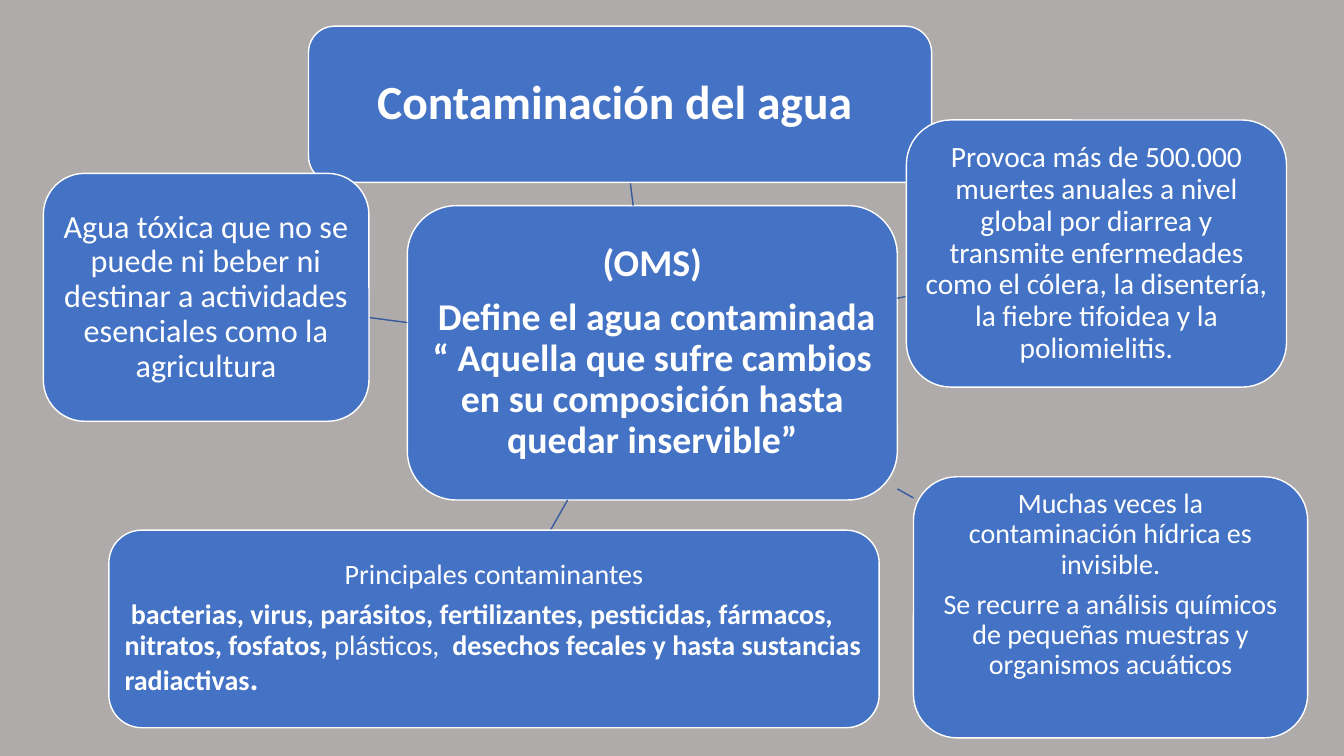
from pptx import Presentation
from pptx.dml.color import RGBColor
from pptx.enum.shapes import MSO_CONNECTOR as Connector, MSO_SHAPE as Shape
from pptx.enum.text import MSO_ANCHOR as Anchor, PP_ALIGN as Align
from pptx.oxml.ns import qn
from pptx.util import Inches, Pt
from lxml import etree

GRAY = RGBColor(0xAF, 0xAB, 0xAB)
BLUE = RGBColor(0x44, 0x72, 0xC4)
DARK_BLUE = RGBColor(0x36, 0x5B, 0x9D)
WHITE = RGBColor(0xFF, 0xFF, 0xFF)


class WaterMap:
    """Style and slide of the concept map."""
    font = "Calibri"
    line_spacing = 0.9
    space_after = 0.35  # share of the text size

    def __init__(self, slide):
        self.slide = slide
        fill = slide.background.fill
        fill.solid()
        fill.fore_color.rgb = GRAY

    def link(self, x1, y1, x2, y2):
        line = self.slide.shapes.add_connector(
            Connector.STRAIGHT, Inches(x1), Inches(y1), Inches(x2), Inches(y2))
        line.line.color.rgb = DARK_BLUE
        line.line.width = Pt(1)
        etree.SubElement(line._element.spPr, qn("a:effectLst"))

    def box(self, left, top, width, height, paragraphs, size, bold=False, inset=0.06):
        bubble = self.slide.shapes.add_shape(
            Shape.ROUNDED_RECTANGLE, Inches(left), Inches(top), Inches(width), Inches(height))
        bubble.shadow.inherit = False
        bubble.fill.solid()
        bubble.fill.fore_color.rgb = BLUE
        bubble.line.color.rgb = WHITE
        bubble.line.width = Pt(1)
        frame = bubble.text_frame
        frame.word_wrap = True
        frame.vertical_anchor = Anchor.MIDDLE
        frame.margin_left = frame.margin_right = Inches(inset)
        frame.margin_top = frame.margin_bottom = Inches(inset)
        frame.text = "\n".join(paragraphs)
        for paragraph in frame.paragraphs:
            paragraph.alignment = Align.CENTER
            paragraph.line_spacing = self.line_spacing
            paragraph.space_after = Pt(self.space_after * size)
            for run in paragraph.runs:
                self.style(run, size, bold)
        return frame

    def style(self, run, size, bold):
        run.font.name = self.font
        run.font.size = Pt(size)
        run.font.bold = bold
        run.font.color.rgb = WHITE

    def mixed_runs(self, paragraph, pieces):
        for text, size, bold in pieces:
            run = paragraph.add_run()
            run.text = text
            self.style(run, size, bold)


def main():
    prs = Presentation()
    prs.slide_width, prs.slide_height = Inches(13.33), Inches(7.5)
    water = WaterMap(prs.slides.add_slide(prs.slide_layouts[6]))

    # Central definition
    water.box(4.04, 2.04, 4.86, 2.92, [
        "(OMS)",
        " Define el agua contaminada “ Aquella que sufre cambios en su composición "
        "hasta quedar inservible”"], 27, bold=True, inset=0.07)

    # Title
    water.link(6.28, 2.04, 6.25, 1.8)
    water.box(3.06, 0.26, 6.18, 1.55, ["Contaminación del agua "], 34, bold=True, inset=0.09)

    # Deaths and diseases
    water.link(8.9, 2.96, 8.99, 2.94)
    water.box(8.99, 1.19, 3.77, 2.65, [
        "Provoca más de 500.000 muertes anuales a nivel global por diarrea y transmite "
        "enfermedades como el cólera, la disentería, la fiebre tifoidea y la poliomielitis."], 21)

    # Main pollutants
    water.link(5.63, 4.96, 5.46, 5.26)
    pollutants = water.box(1.08, 5.26, 7.64, 1.96, ["Principales contaminantes", ""], 20)
    pollutant_list = pollutants.paragraphs[1]
    pollutant_list.alignment = Align.LEFT
    water.mixed_runs(pollutant_list, [
        (" bacterias, virus, parásitos, fertilizantes, pesticidas, fármacos, nitratos, fosfatos,",
         20, True),
        (" plásticos, ", 20, False),
        (" desechos fecales y hasta sustancias radiactivas", 20, True),
        (".", 24, True)])

    # Toxic water
    water.link(4.04, 3.2, 3.66, 3.15)
    water.box(0.43, 1.72, 3.23, 2.46, [
        "Agua tóxica que no se puede ni beber ni destinar a actividades esenciales "
        "como la agricultura"], 23)

    # Invisible pollution, set from the top of its box
    water.link(8.9, 4.85, 9.06, 4.94)
    invisible = water.box(9.06, 4.73, 3.91, 2.59, [
        "Muchas veces la contaminación hídrica es invisible.",
        "Se recurre a análisis químicos de pequeñas muestras y organismos acuáticos"], 20)
    invisible.vertical_anchor = Anchor.TOP
    invisible.margin_top = 0

    prs.save("out.pptx")


if __name__ == "__main__":
    main()
